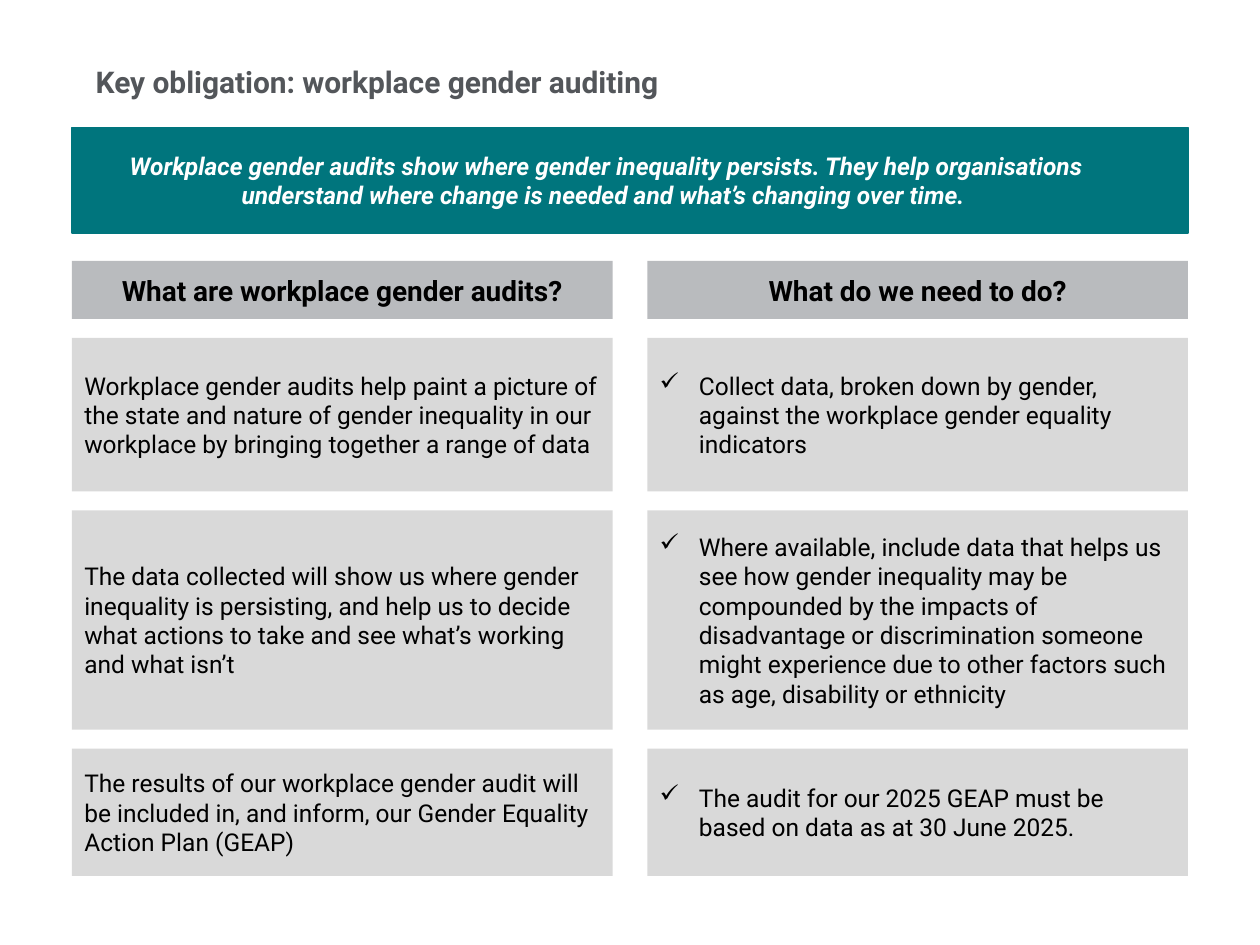
from lxml import etree
from pptx import Presentation
from pptx.dml.color import RGBColor
from pptx.enum.shapes import MSO_SHAPE
from pptx.enum.text import MSO_ANCHOR, MSO_AUTO_SIZE, PP_ALIGN
from pptx.oxml.ns import qn
from pptx.util import Cm, Pt

RECTANGLE = MSO_SHAPE.RECTANGLE
MIDDLE, BOTTOM = MSO_ANCHOR.MIDDLE, MSO_ANCHOR.BOTTOM
LEFT, CENTER = PP_ALIGN.LEFT, PP_ALIGN.CENTER
NO_AUTOFIT = MSO_AUTO_SIZE.NONE

TITLE = "Key obligation: workplace gender auditing"
BANNER = (
    "Workplace gender audits show where gender inequality persists. They help "
    "organisations understand where change is needed and what’s changing over time. "
)
COLUMNS = [
    {
        "heading": "What are workplace gender audits?",
        "bullet": None,
        "texts": [
            "Workplace gender audits help paint a picture of the state and nature of "
            "gender inequality in our workplace by bringing together a range of data",
            "The data collected will show us where gender inequality is persisting, and "
            "help us to decide what actions to take and see what’s working and what isn’t",
            "The results of our workplace gender audit will be included in, and inform, "
            "our Gender Equality Action Plan (GEAP)",
        ],
    },
    {
        "heading": "What do we need to do?",
        "bullet": "✓",
        "texts": [
            "Collect data, broken down by gender, against the workplace gender equality "
            "indicators",
            "Where available, include data that helps us see how gender inequality may be "
            "compounded by the impacts of disadvantage or discrimination someone might "
            "experience due to other factors such as age, disability or ethnicity",
            "The audit for our 2025 GEAP must be based on data as at 30 June 2025.",
        ],
    },
]

TITLE_FONT = {"name": "Roboto", "size": Pt(17.1), "bold": True}
BANNER_FONT = {"name": "Roboto", "size": Pt(14), "bold": True, "italic": True}
HEADING_FONT = {"name": "Roboto", "size": Pt(16), "bold": True}
BODY_FONT = {"name": "Roboto", "size": Pt(14)}

TEAL, GREY, PALE_GREY = "00757D", "B9BBBE", "D9D9D9"
MARGIN, COLUMN_WIDTH, COLUMN_GAP = 1.45, 10.9, 0.7
ROWS_TOP, ROW_GAP = 5.26, 0.38
HEADING_HEIGHT, ROW_HEIGHTS = 1.17, [3.1, 4.42, 2.57]
BULLET_INDENT = Cm(0.79)


def set_color(color_format, hex_color):
    color_format.rgb = RGBColor.from_string(hex_color)


def write(box, text, font, color, align, anchor):
    """Fill the box with one formatted paragraph and return that paragraph."""
    frame = box.text_frame
    frame.word_wrap = True
    frame.auto_size = NO_AUTOFIT
    frame.vertical_anchor = anchor
    para = frame.paragraphs[0]
    para.alignment = align
    span = para.add_run()
    span.text = text
    for name, value in font.items():
        setattr(span.font, name, value)
    set_color(span.font.color, color)
    return para


def set_insets(box, left, top, right, bottom):
    frame = box.text_frame
    frame.margin_left, frame.margin_top = Cm(left), Cm(top)
    frame.margin_right, frame.margin_bottom = Cm(right), Cm(bottom)


def add_panel(page, left, top, width, height, fill):
    box = page.shapes.add_shape(RECTANGLE, Cm(left), Cm(top), Cm(width), Cm(height))
    box.shadow.inherit = False
    box.fill.solid()
    set_color(box.fill.fore_color, fill)
    box.line.fill.background()
    return box


def add_bullet(para, symbol):
    properties = para._p.get_or_add_pPr()
    properties.set("marL", str(BULLET_INDENT))
    properties.set("indent", str(-BULLET_INDENT))
    etree.SubElement(properties, qn("a:buChar")).set("char", symbol)


def add_title(page):
    title = page.shapes.title
    title.left, title.top, title.width, title.height = Cm(1.93), Cm(0), Cm(17.1), Cm(2)
    write(title, TITLE, TITLE_FONT, "53565A", LEFT, BOTTOM)
    set_insets(title, 0, 0, 0, 0)


def add_banner(page):
    width = 2 * COLUMN_WIDTH + COLUMN_GAP
    banner = add_panel(page, MARGIN, 2.57, width, 2.13, TEAL)
    set_color(banner.line.color, TEAL)
    banner.line.width = Pt(0.75)
    write(banner, BANNER, BANNER_FONT, "FFFFFF", CENTER, MIDDLE)
    set_insets(banner, 0.05, 0.13, 0.99, 0.13)


def add_column(page, left, column):
    heading = add_panel(page, left, ROWS_TOP, COLUMN_WIDTH, HEADING_HEIGHT, GREY)
    para = write(heading, column["heading"], HEADING_FONT, "000000", CENTER, MIDDLE)
    para.space_after = Pt(6)

    top = ROWS_TOP + HEADING_HEIGHT + ROW_GAP
    for text, height in zip(column["texts"], ROW_HEIGHTS):
        box = add_panel(page, left, top, COLUMN_WIDTH, height, PALE_GREY)
        para = write(box, text, BODY_FONT, "000000", LEFT, MIDDLE)
        if column["bullet"]:
            add_bullet(para, column["bullet"])
        top += height + ROW_GAP


def main():
    deck = Presentation()
    deck.slide_width, deck.slide_height = Cm(25.4), Cm(19.05)
    page = deck.slides.add_slide(deck.slide_layouts[5])
    add_title(page)
    add_banner(page)
    for index, column in enumerate(COLUMNS):
        add_column(page, MARGIN + index * (COLUMN_WIDTH + COLUMN_GAP), column)
    deck.save("out.pptx")


if __name__ == "__main__":
    main()
